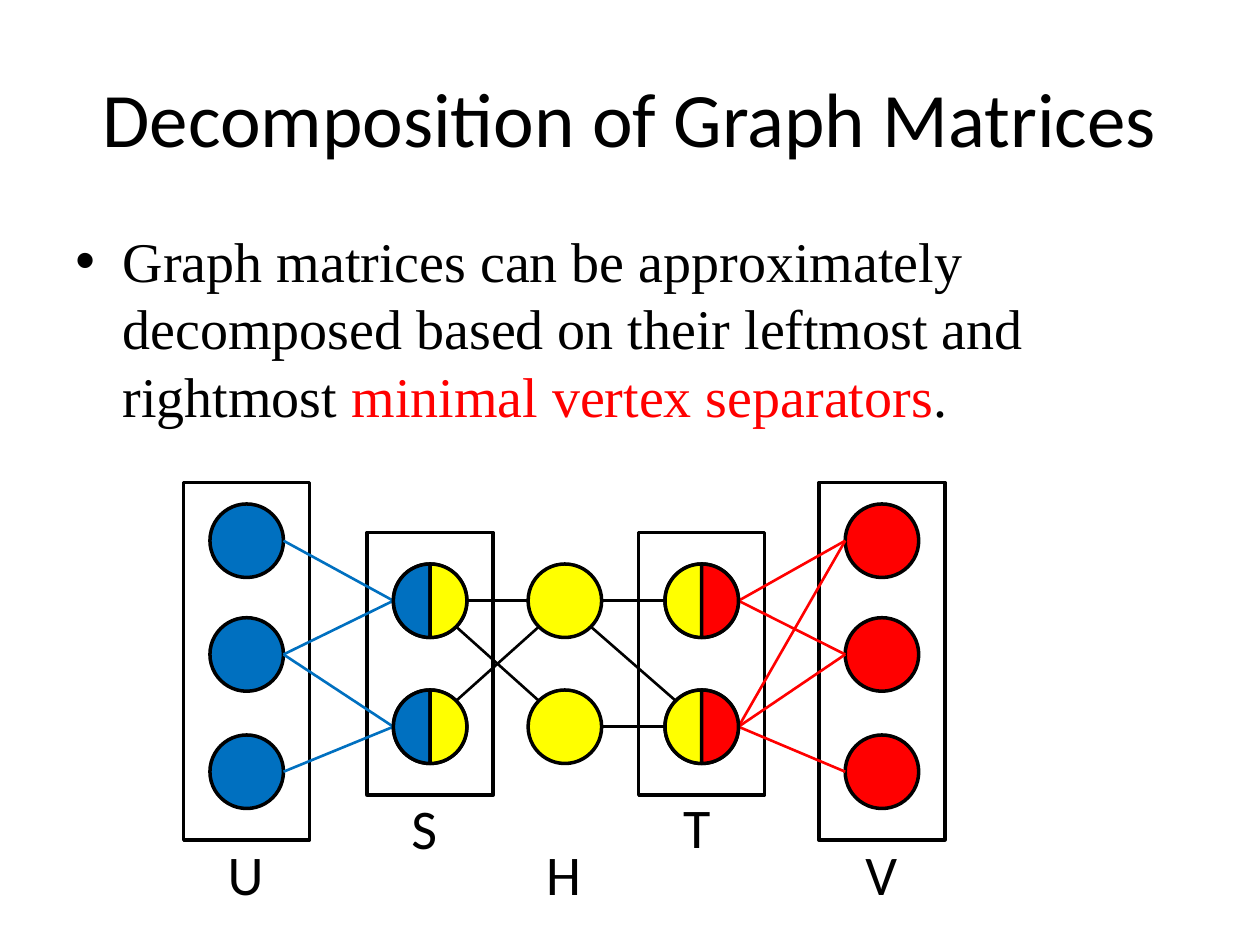
from math import sqrt

from lxml import etree
from pptx import Presentation
from pptx.dml.color import RGBColor
from pptx.enum.shapes import MSO_CONNECTOR as Connector, MSO_SHAPE as Shape
from pptx.enum.text import MSO_ANCHOR as Anchor, MSO_AUTO_SIZE as AutoSize, PP_ALIGN as Align
from pptx.oxml.ns import qn
from pptx.util import Pt

COLORS = {"black": "000000", "white": "FFFFFF", "blue": "0070C0",
          "yellow": "FFFF00", "red": "FF0000"}
RADIUS = 21
CURVE = 0.5523  # Bezier handle of a quarter circle, as a share of the radius
COLUMNS = {"U": 141, "S": 245.8, "H": 322.8, "T": 401, "V": 504}
OUTER_ROWS = (309, 374, 441)
INNER_ROWS = (343.3, 415.3)
BOXES = {"U": (275.8, 204.2), "V": (275.8, 204.2), "T": (304.3, 150), "S": (304.3, 150)}
BOX_WIDTH = 72
FILLS = {"U": ["blue"], "S": ["blue", "yellow"], "H": ["yellow"],
         "T": ["yellow", "red"], "V": ["red"]}
EDGES = {
    "blue": ["U1 S1", "U2 S1", "U2 S2", "U3 S2"],
    "black": ["S1 H1", "S1 H2", "S2 H1", "H1 T1", "H1 T2", "H2 T2"],
    "red": ["T1 V1", "T1 V2", "T2 V1", "T2 V2", "T2 V3"],
}
LABELS = {"U": (123, 476, 35.3), "S": (228, 450, 29.5), "H": (305, 476, 34.6),
          "T": (383.3, 449.3, 30.2), "V": (487.4, 476, 33.1)}


class GraphSlide:
    def __init__(self, slide, line_width=2, edge_width=1.5):
        self.slide = slide
        self.line_width = line_width
        self.edge_width = edge_width

    def color(self, name):
        return RGBColor.from_string(COLORS[name])

    def style_font(self, run, size, font_name, color="black"):
        run.font.size = Pt(size)
        run.font.name = font_name
        run.font.color.rgb = self.color(color)

    def style_shape(self, shape, fill):
        shape.shadow.inherit = False
        if fill:
            shape.fill.solid()
            shape.fill.fore_color.rgb = self.color(fill)
        else:
            shape.fill.background()
        shape.line.color.rgb = self.color("black")
        shape.line.width = Pt(self.line_width)

    def title(self, text):
        title = self.slide.shapes.title
        title.left, title.top, title.width, title.height = Pt(36), Pt(21.6), Pt(648), Pt(90)
        title.text_frame.text = text
        title.text_frame.vertical_anchor = Anchor.MIDDLE
        paragraph = title.text_frame.paragraphs[0]
        paragraph.alignment = Align.CENTER
        self.style_font(paragraph.runs[0], 44, "Calibri")

    def bullet(self, parts):
        text_box = self.slide.shapes.add_textbox(Pt(36), Pt(126), Pt(648), Pt(138))
        text_box.text_frame.word_wrap = True
        paragraph = text_box.text_frame.paragraphs[0]
        paragraph.space_before = Pt(6.4)
        for text, color in parts:
            run = paragraph.add_run()
            run.text = text
            self.style_font(run, 32, "Times New Roman", color)
        properties = paragraph._p.get_or_add_pPr()
        properties.set("marL", str(Pt(27)))
        properties.set("indent", str(-Pt(27)))
        etree.SubElement(properties, qn("a:buFont")).set("typeface", "Arial")
        etree.SubElement(properties, qn("a:buChar")).set("char", "•")

    def label(self, text, left, top, width):
        text_box = self.slide.shapes.add_textbox(Pt(left), Pt(top), Pt(width), Pt(46))
        frame = text_box.text_frame
        frame.text = text
        frame.word_wrap = False
        frame.auto_size = AutoSize.SHAPE_TO_FIT_TEXT
        self.style_font(frame.paragraphs[0].runs[0], 32, "Calibri")

    def box(self, center_x, top, height):
        shape = self.slide.shapes.add_shape(
            Shape.RECTANGLE, Pt(center_x - BOX_WIDTH / 2), Pt(top), Pt(BOX_WIDTH), Pt(height))
        self.style_shape(shape, "white")

    def circle(self, center, fill):
        x, y = center
        shape = self.slide.shapes.add_shape(
            Shape.OVAL, Pt(x - RADIUS), Pt(y - RADIUS), Pt(2 * RADIUS), Pt(2 * RADIUS))
        self.style_shape(shape, fill)

    def half_circle(self, center, side, fill):
        """Draw the left (side -1) or right (side 1) half of a vertex."""
        x, y = center
        builder = self.slide.shapes.build_freeform(Pt(x), Pt(y - RADIUS))
        builder.add_line_segments(
            [(Pt(x + side * RADIUS), Pt(y)), (Pt(x), Pt(y + RADIUS))], close=True)
        shape = builder.convert_to_shape()
        self.style_shape(shape, fill)

        handles = [[(CURVE, -1), (1, -CURVE)], [(1, CURVE), (CURVE, 1)]]
        origin_x = 0 if side == 1 else RADIUS
        for line, controls in zip(list(shape._element.iter(qn("a:lnTo"))), handles):
            line.tag = qn("a:cubicBezTo")
            for index, (across, down) in enumerate(controls):
                point = etree.Element(qn("a:pt"))
                point.set("x", str(Pt(origin_x + side * across * RADIUS)))
                point.set("y", str(Pt(RADIUS + down * RADIUS)))
                line.insert(index, point)

    def edge(self, start, end, color):
        """Join two vertices; sloping black edges leave the circles at 45 degrees."""
        (x1, y1), (x2, y2) = start, end
        dx, dy = RADIUS, 0
        if color == "black" and y1 != y2:
            dx = RADIUS / sqrt(2)
            dy = dx if y2 > y1 else -dx
        connector = self.slide.shapes.add_connector(
            Connector.STRAIGHT, Pt(x1 + dx), Pt(y1 + dy), Pt(x2 - dx), Pt(y2 - dy))
        connector.line.color.rgb = self.color(color)
        connector.line.width = Pt(self.edge_width)
        etree.SubElement(connector._element.spPr, qn("a:effectLst"))


def main():
    presentation = Presentation()
    presentation.slide_width, presentation.slide_height = Pt(720), Pt(540)
    graph = GraphSlide(presentation.slides.add_slide(presentation.slide_layouts[5]))

    for column, (top, height) in BOXES.items():
        graph.box(COLUMNS[column], top, height)
    graph.title("Decomposition of Graph Matrices")
    graph.bullet([
        ("Graph matrices can be approximately decomposed based on their leftmost "
         "and rightmost ", "black"),
        ("minimal vertex separators", "red"),
        (".", "black"),
    ])

    vertices = {}
    for column, x in COLUMNS.items():
        rows = OUTER_ROWS if column in "UV" else INNER_ROWS
        for number, y in enumerate(rows, 1):
            vertices[f"{column}{number}"] = (x, y)

    for name, center in vertices.items():
        fills = FILLS[name[0]]
        graph.circle(center, fills[0] if len(fills) == 1 else None)
    for color, edges in EDGES.items():
        for edge in edges:
            start, end = edge.split()
            graph.edge(vertices[start], vertices[end], color)
    for name, center in vertices.items():
        fills = FILLS[name[0]]
        if len(fills) == 2:
            for side, fill in zip((-1, 1), fills):
                graph.half_circle(center, side, fill)
    for text, place in LABELS.items():
        graph.label(text, *place)

    presentation.save("out.pptx")


if __name__ == "__main__":
    main()
